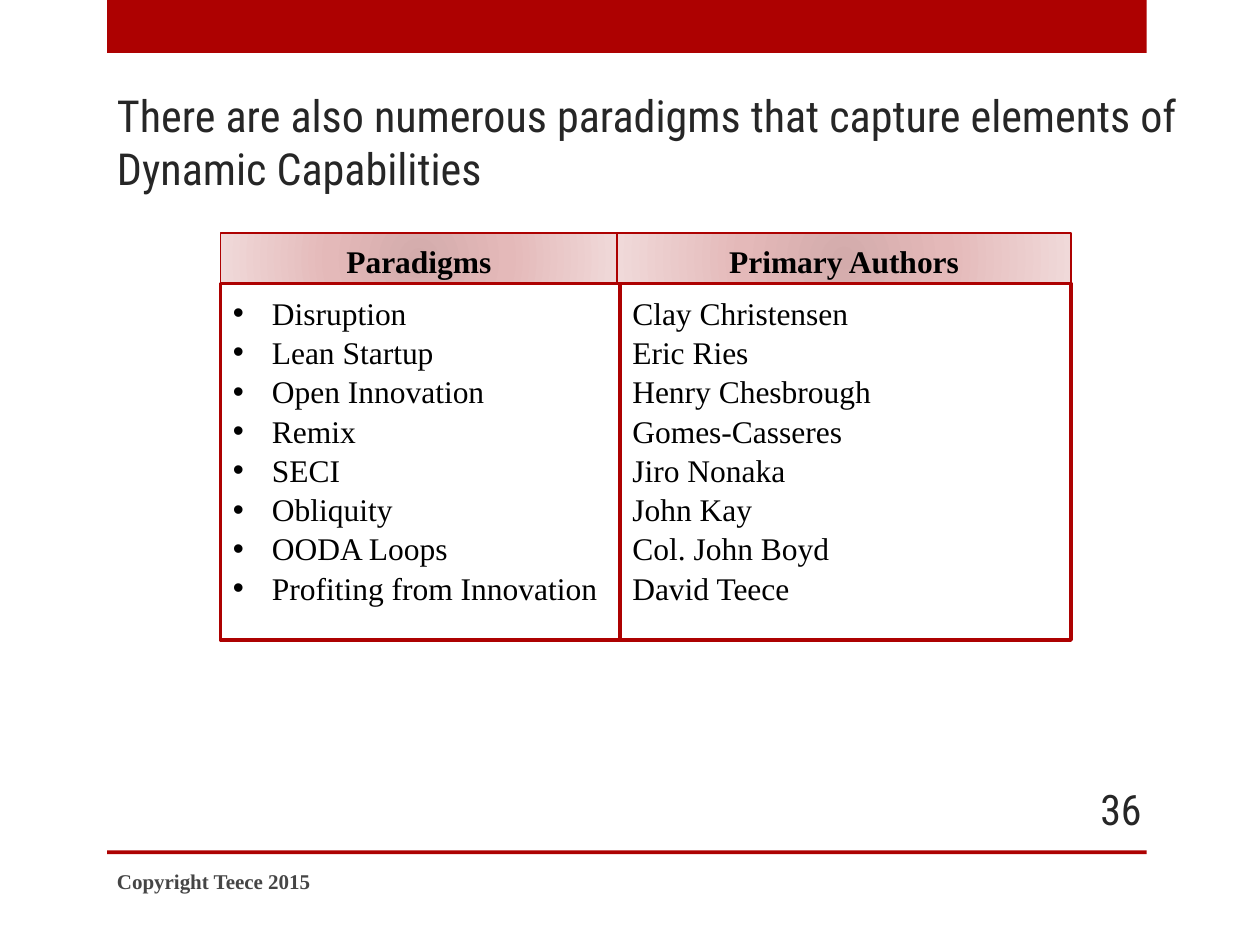
import pptx
import pptx.util
import pptx.dml.color
import pptx.enum.shapes
import pptx.enum.text
import pptx.oxml
import pptx.oxml.ns

Inches = pptx.util.Inches
Pt = pptx.util.Pt
ALIGN = pptx.enum.text.PP_ALIGN
ANCHOR = pptx.enum.text.MSO_ANCHOR

COLORS = {
    "red": "AD0101",
    "white": "FFFFFF",
    "black": "000000",
    "title": "262626",
    "footer": "454545",
}
STOPS = [(0, "D3ABAB"), (45, "E4B9B9"), (100, "F0D9D9")]
SERIF = "Times New Roman"
SANS = "Roboto Condensed"

ROWS = [
    ("Disruption", "Clay Christensen"),
    ("Lean Startup", "Eric Ries"),
    ("Open Innovation", "Henry Chesbrough"),
    ("Remix", "Gomes-Casseres"),
    ("SECI", "Jiro Nonaka"),
    ("Obliquity", "John Kay"),
    ("OODA Loops", "Col. John Boyd"),
    ("Profiting from Innovation", "David Teece"),
]
LEFT, RIGHT = 1.75, 8.5
TOP, SPLIT, BOTTOM = 1.85, 2.25, 5.08


def color(name):
    return pptx.dml.color.RGBColor.from_string(COLORS[name])


def add_bullet(para):
    props = para._p.get_or_add_pPr()
    props.set("marL", str(Inches(0.31)))
    props.set("indent", str(-Inches(0.31)))
    props.append(pptx.oxml.parse_xml(
        f'<a:buFont {pptx.oxml.ns.nsdecls("a")} typeface="Arial"/>'))
    props.append(pptx.oxml.parse_xml(
        f'<a:buChar {pptx.oxml.ns.nsdecls("a")} char="•"/>'))


def put_text(shape, lines, size=18, font=SERIF, tint="black", bold=False,
             align=ALIGN.LEFT, anchor=ANCHOR.TOP, space=None, bullet=False,
             inset=0.05):
    """Fill a shape with one paragraph for each line."""
    frame = shape.text_frame
    frame.word_wrap = True
    frame.vertical_anchor = anchor
    frame.margin_top = Inches(inset)
    for i, line in enumerate(lines):
        para = frame.add_paragraph() if i else frame.paragraphs[0]
        para.alignment = align
        if space:
            para.line_spacing = space
        if bullet:
            add_bullet(para)
        run = para.add_run()
        run.text = line
        run.font.size = Pt(size)
        run.font.name = font
        run.font.bold = bold
        run.font.color.rgb = color(tint)


def add_label(slide, box, text, **style):
    shape = slide.shapes.add_textbox(*map(Inches, box))
    put_text(shape, [text], **style)


def add_rect(slide, box, fill, width=None):
    """Draw a filled rectangle, with a red outline if a width is given."""
    shape = slide.shapes.add_shape(
        pptx.enum.shapes.MSO_SHAPE.RECTANGLE, *map(Inches, box))
    shape.shadow.inherit = False
    shape.fill.solid()
    shape.fill.fore_color.rgb = color(fill)
    if width:
        shape.line.color.rgb = color("red")
        shape.line.width = Pt(width)
    else:
        shape.line.fill.background()
    return shape


def shade(shape):
    """Swap the solid fill for a radial gradient."""
    stops = "".join(
        f'<a:gs pos="{pos * 1000}"><a:srgbClr val="{tint}"/></a:gs>'
        for pos, tint in STOPS)
    grad = pptx.oxml.parse_xml(
        f'<a:gradFill {pptx.oxml.ns.nsdecls("a")} rotWithShape="1">'
        f'<a:gsLst>{stops}</a:gsLst><a:path path="circle">'
        '<a:fillToRect l="100000" t="100000" r="100000" b="100000"/>'
        '</a:path></a:gradFill>')
    props = shape._element.spPr
    props.replace(props.find(pptx.oxml.ns.qn("a:solidFill")), grad)


def add_head(slide, left, right, text):
    shape = add_rect(slide, (left, TOP, right - left, SPLIT - TOP), "white", 1)
    shade(shape)
    put_text(shape, [text], bold=True, align=ALIGN.CENTER, inset=0.07)


def add_body(slide, left, right, lines, bullet=False):
    box = (left, SPLIT, right - left, BOTTOM - SPLIT)
    shape = add_rect(slide, box, "white", 2.08)
    put_text(shape, lines, space=1.04, bullet=bullet, inset=0.07)


def main():
    deck = pptx.Presentation()
    deck.slide_width, deck.slide_height = Inches(10), Inches(7.5)
    slide = deck.slides.add_slide(deck.slide_layouts[6])

    for top, height in ((0, 0.42), (6.75, 0.03)):
        add_rect(slide, (0.85, top, 8.25, height), "red")
    add_label(slide, (0.83, 0.92, 8.75, 0.67),
              "There are also numerous paradigms that capture elements of "
              "Dynamic Capabilities",
              size=25.2, font=SANS, tint="title", anchor=ANCHOR.BOTTOM)
    add_label(slide, (0.83, 6.79, 5.33, 0.4), "Copyright Teece 2015",
              size=12, tint="footer", bold=True, anchor=ANCHOR.MIDDLE)
    add_label(slide, (8.33, 6.22, 0.83, 0.4), "36", size=24, font=SANS,
              tint="title", align=ALIGN.RIGHT, anchor=ANCHOR.MIDDLE)

    add_head(slide, LEFT, 4.9, "Paradigms")
    add_head(slide, 4.9, RIGHT, "Primary Authors")
    ideas, authors = zip(*ROWS)
    add_body(slide, LEFT, 4.92, ideas, bullet=True)
    add_body(slide, 4.92, RIGHT, authors)

    deck.save("out.pptx")


if __name__ == "__main__":
    main()
